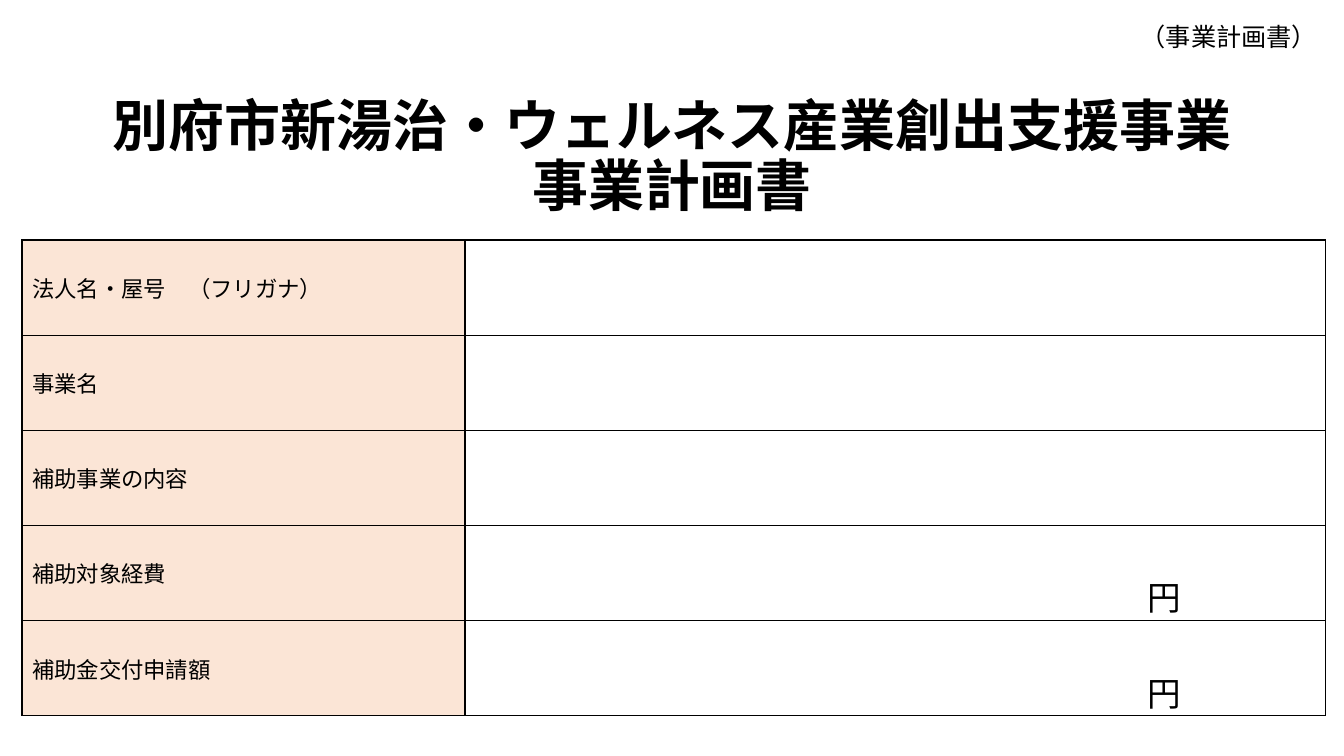
from lxml import etree
from pptx import Presentation, util as u
from pptx.dml.color import RGBColor
from pptx.enum import text
from pptx.oxml import ns

BLACK = RGBColor(0x00, 0x00, 0x00)
WHITE = RGBColor(0xFF, 0xFF, 0xFF)
PEACH = RGBColor(0xFB, 0xE5, 0xD6)
FONT = "Noto Sans CJK JP"
LEFT, CENTER, RIGHT = text.PP_ALIGN.LEFT, text.PP_ALIGN.CENTER, text.PP_ALIGN.RIGHT


def px(n):
    return u.Emu(round(n * 914400 / 100.8))


def write(tf, lines, size, align, bold=False):
    p = tf.paragraphs[0]
    p.alignment = align
    for i, line in enumerate(lines):
        if i:
            p.add_line_break()
        r = p.add_run()
        r.text = line
        for name, value in {"name": FONT, "size": u.Pt(size), "bold": bold}.items():
            setattr(r.font, name, value)
        r.font.color.rgb = BLACK
        etree.SubElement(r.font._element, ns.qn("a:ea"), typeface=FONT)
    return p


prs = Presentation()
prs.slide_width, prs.slide_height = px(1344), px(756)
s = prs.slides.add_slide(prs.slide_layouts[6])

title = s.shapes.add_textbox(px(0), px(97), px(1344), px(123)).text_frame
title.word_wrap = True
title.vertical_anchor = text.MSO_ANCHOR.MIDDLE
heading = ["別府市新湯治・ウェルネス産業創出支援事業", "事業計画書"]
write(title, heading, 40, CENTER, True).line_spacing = 0.9

tag = s.shapes.add_textbox(px(1104), px(16), px(223), px(40)).text_frame
tag.word_wrap = True
write(tag, ["（事業計画書）"], 18, RIGHT)

rows = [
    ("法人名・屋号　（フリガナ）", ""),
    ("事業名", ""),
    ("補助事業の内容", ""),
    ("補助対象経費", "円"),
    ("補助金交付申請額", "円"),
]
frame = s.shapes.add_table(len(rows), 2, px(22), px(240), px(1304), px(476))
table = frame.table
table.first_row = table.horz_banding = False
for column, width in zip(table.columns, (443, 861)):
    column.width = px(width)

for y, (label, unit) in enumerate(rows):
    label_cell, value_cell = table.cell(y, 0), table.cell(y, 1)
    label_cell.vertical_anchor = text.MSO_ANCHOR.MIDDLE
    write(label_cell.text_frame, [label], 16, LEFT)
    if unit:
        value_format = {
            "vertical_anchor": text.MSO_ANCHOR.BOTTOM,
            "margin_right": px(145),
            "margin_bottom": 0,
        }
        for name, value in value_format.items():
            setattr(value_cell, name, value)
        write(value_cell.text_frame, [unit], 24, RIGHT)
    for cell, color in ((label_cell, PEACH), (value_cell, WHITE)):
        cell.fill.solid()
        cell.fill.fore_color.rgb = color
        tc_pr = cell._tc.get_or_add_tcPr()
        for i, side in enumerate(("lnL", "lnR", "lnT", "lnB")):
            ln = etree.Element(ns.qn("a:" + side), w=str(u.Pt(1)))
            fill = etree.SubElement(ln, ns.qn("a:solidFill"))
            etree.SubElement(fill, ns.qn("a:srgbClr"), val=str(BLACK))
            tc_pr.insert(i, ln)

prs.save("out.pptx")
